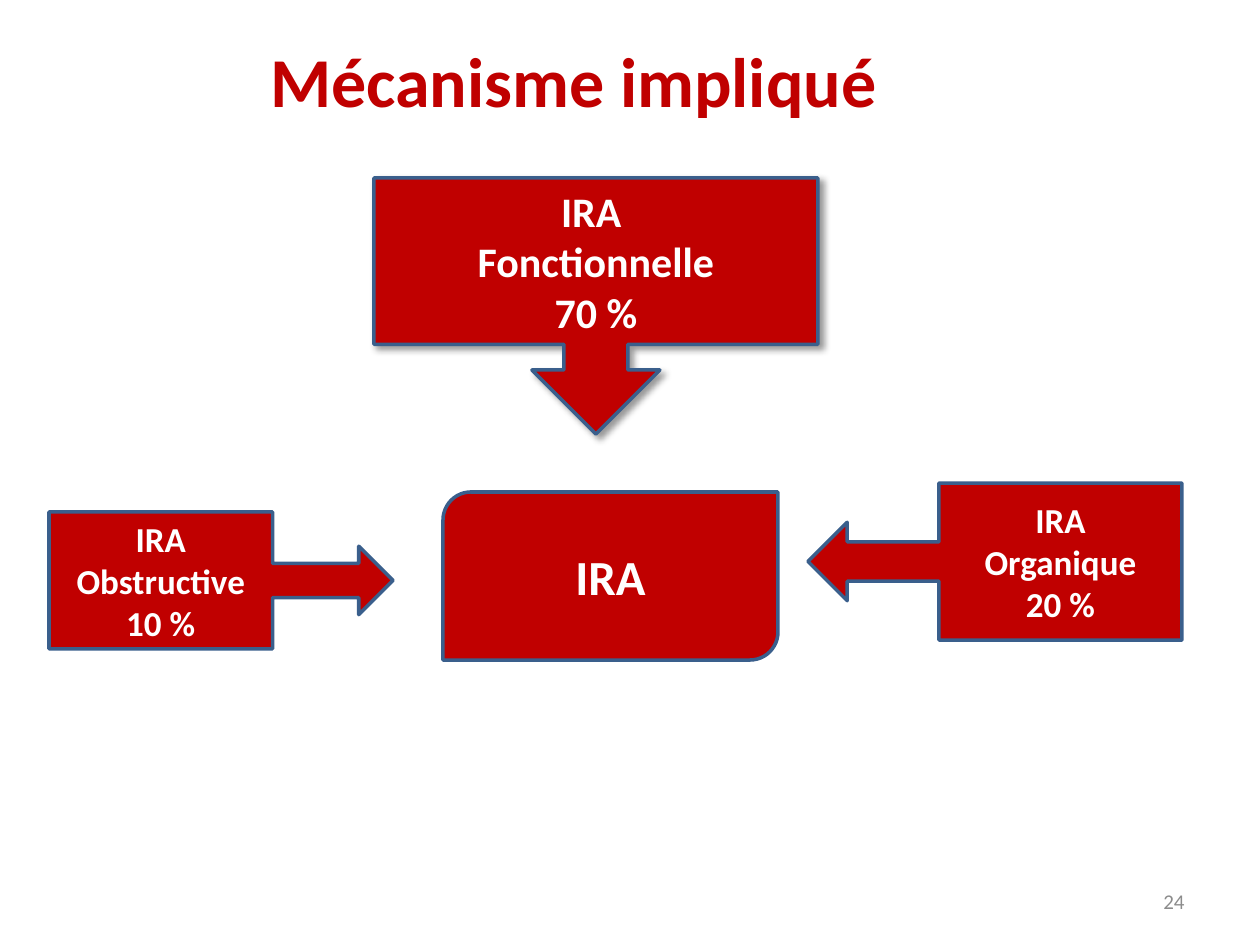
from lxml import etree
from pptx import Presentation
from pptx.dml.color import RGBColor
from pptx.enum import shapes, text
from pptx.oxml.ns import qn
from pptx.util import Pt

SCALE = 914400 / 126
KIND = shapes.MSO_SHAPE
ALIGN = text.PP_ALIGN


def emu(px):
    return round(px * SCALE)


def colour(value):
    return RGBColor.from_string(value)


class SlideBuilder:
    font = "Calibri"
    red = "C00000"
    blue = "3A5F8C"
    white = "FFFFFF"
    grey = "8C8C8C"

    def __init__(self, deck):
        self.page = deck.slides.add_slide(deck.slide_layouts[5])

    def add_lines(self, shape, lines, size, tint, bold=True, align=ALIGN.CENTER):
        frame = shape.text_frame
        frame.word_wrap = True
        frame.vertical_anchor = text.MSO_ANCHOR.MIDDLE
        for index, line in enumerate(lines):
            para = frame.add_paragraph() if index else frame.paragraphs[0]
            para.alignment = align
            span = para.add_run()
            span.text = line
            span.font.name = self.font
            span.font.size = Pt(size)
            span.font.bold = bold
            span.font.color.rgb = colour(tint)

    def title(self, area, line):
        box = self.page.shapes.title
        box.left, box.top, box.width, box.height = map(emu, area)
        self.add_lines(box, [line], 40, self.red)

    def number(self, area, line):
        box = self.page.shapes.add_textbox(*map(emu, area))
        self.add_lines(box, [line], 12, self.grey, False, ALIGN.RIGHT)

    def block(self, kind, area, lines, size):
        shape = self.page.shapes.add_shape(kind, *map(emu, area))
        shape.shadow.inherit = False
        shape.fill.solid()
        shape.fill.fore_color.rgb = colour(self.red)
        shape.line.color.rgb = colour(self.blue)
        shape.line.width = Pt(2)
        self.add_lines(shape, lines, size, self.white)
        return shape

    def shadow(self, shape):
        effects = shape.element.spPr.find(qn("a:effectLst"))
        outer = etree.SubElement(
            effects, qn("a:outerShdw"), blurRad=str(Pt(4)), dist=str(Pt(3)),
            dir="2700000", algn="tl", rotWithShape="0")
        tint = etree.SubElement(outer, qn("a:srgbClr"), val="000000")
        etree.SubElement(tint, qn("a:alpha"), val="40000")


def main():
    deck = Presentation()
    deck.slide_width, deck.slide_height = emu(1260), emu(945)
    slide = SlideBuilder(deck)
    slide.title((59, 0, 1029, 158), "Mécanisme impliqué")
    slide.number((903, 876, 294, 50), "24")
    functional = slide.block(KIND.DOWN_ARROW_CALLOUT, (374, 178, 444, 256),
                             ["IRA ", "Fonctionnelle", "70 %"], 24)
    slide.shadow(functional)
    slide.block(KIND.ROUND_2_DIAG_RECTANGLE, (443, 492, 335, 168), ["IRA"], 28)
    slide.block(KIND.RIGHT_ARROW_CALLOUT, (49, 512, 344, 137),
                ["IRA", "Obstructive", "10 %"], 20)
    slide.block(KIND.LEFT_ARROW_CALLOUT, (808, 483, 374, 157),
                ["IRA", "Organique", "20 %"], 20)
    deck.save("out.pptx")


if __name__ == "__main__":
    main()
